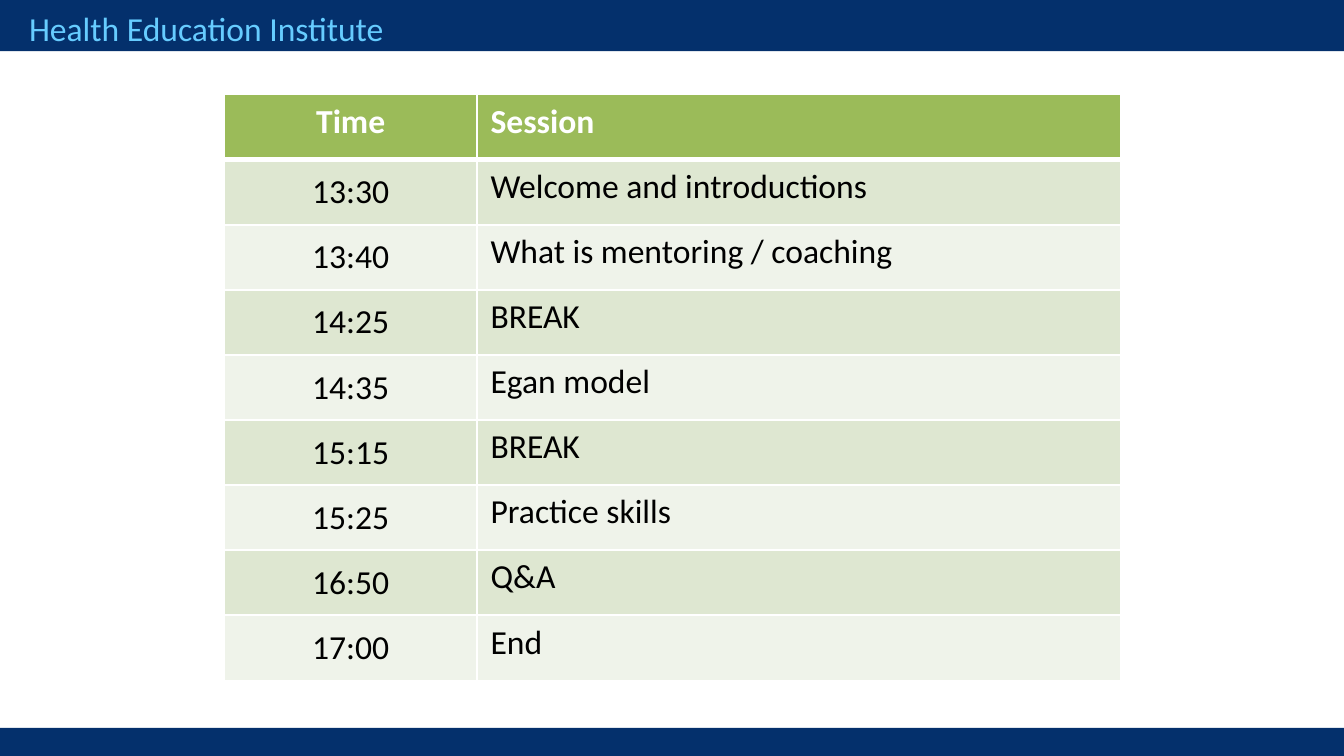
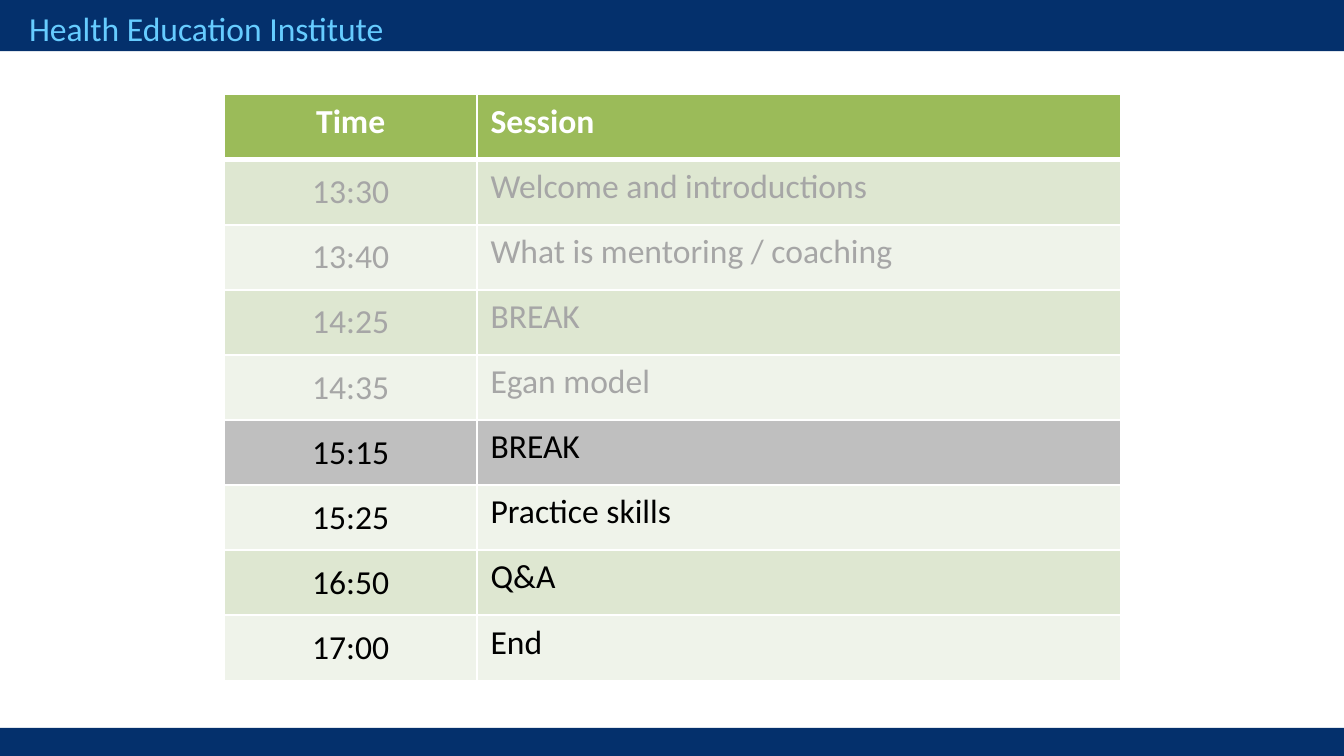
from lxml import etree
from pptx import Presentation
from pptx.dml.color import RGBColor
from pptx.enum import shapes, text
from pptx.oxml import ns
from pptx.util import Cm, Pt

COLORS = {
    "band": "04306C",
    "brand": "66CCFF",
    "header": "9BBB59",
    "odd": "DEE7D1",
    "even": "EFF3EA",
    "current": "BFBFBF",
    "past": "A6A6A6",
    "text": "000000",
    "white": "FFFFFF",
}
FONT = "Calibri"
SIZE = Pt(18)
WIDTH, HEIGHT = Cm(25.4), Cm(14.29)
TOP_BAND = (0, 0, WIDTH, Cm(0.97))
BOTTOM_BAND = (0, Cm(13.76), WIDTH, Cm(0.53))
BRAND_BOX = (Cm(0.3), Cm(0.02), Cm(10.8), Cm(1.02))
AGENDA_BOX = (Cm(4.24), Cm(1.79), Cm(16.94), Cm(11.07))
TIME_SHARE = 0.282

HEADER = ("Time", "Session")
SESSIONS = [
    ("13:30", "Welcome and introductions"),
    ("13:40", "What is mentoring / coaching"),
    ("14:25", "BREAK"),
    ("14:35", "Egan model"),
    ("15:15", "BREAK"),
    ("15:25", "Practice skills"),
    ("16:50", "Q&A"),
    ("17:00", "End"),
]


def rgb(name):
    """Return the palette colour called name."""
    return RGBColor.from_string(COLORS[name])


def style_text(p, color, bold=False):
    """Apply the shared font to a paragraph."""
    p.font.name, p.font.size, p.font.bold = FONT, SIZE, bold
    p.font.color.rgb = rgb(color)


def add_band(slide, box):
    """Draw one plain band across the slide."""
    sp = slide.shapes.add_shape(shapes.MSO_SHAPE.RECTANGLE, *box)
    sp.shadow.inherit = False
    sp.fill.solid()
    sp.fill.fore_color.rgb = rgb("band")
    sp.line.fill.background()


def add_frame(slide):
    """Add the bands and the organisation name that all slides share."""
    add_band(slide, TOP_BAND)
    add_band(slide, BOTTOM_BAND)
    tf = slide.shapes.add_textbox(*BRAND_BOX).text_frame
    tf.word_wrap = True
    tf.auto_size = text.MSO_AUTO_SIZE.SHAPE_TO_FIT_TEXT
    p = tf.paragraphs[0]
    p.text = "Health Education Institute"
    style_text(p, "brand")


def set_borders(cell, top=1, bottom=1):
    """Give a cell white borders, with widths in points."""
    tc_pr = cell._tc.get_or_add_tcPr()
    for side, width in (("L", 1), ("R", 1), ("T", top), ("B", bottom)):
        ln = etree.SubElement(tc_pr, ns.qn(f"a:ln{side}"), w=str(Pt(width)))
        fill = etree.SubElement(ln, ns.qn("a:solidFill"))
        etree.SubElement(fill, ns.qn("a:srgbClr"), val=COLORS["white"])


def row_colors(row, current):
    """Return the fill and text colours of a row."""
    if row == 0:
        return "header", "white"
    fill = "current" if row == current else ("even", "odd")[row % 2]
    return fill, "past" if current and row < current else "text"


def add_agenda(slide, box, current=None):
    """Add the agenda table, highlighting the current row and greying earlier ones."""
    rows = [HEADER, *SESSIONS]
    left, top, width, height = box
    table = slide.shapes.add_table(len(rows), len(HEADER), left, top, width, height).table
    table.horz_banding = False
    table.columns[0].width = round(width * TIME_SHARE)
    table.columns[1].width = width - table.columns[0].width
    for i, values in enumerate(rows):
        table.rows[i].height = height // len(rows)
        fill, color = row_colors(i, current)
        for j, value in enumerate(values):
            cell = table.cell(i, j)
            set_borders(cell, top=3 if i == 1 else 1, bottom=3 if i == 0 else 1)
            cell.fill.solid()
            cell.fill.fore_color.rgb = rgb(fill)
            p = cell.text_frame.paragraphs[0]
            p.text = value
            style_text(p, color, bold=i == 0)
            if j == 0:
                p.alignment = text.PP_ALIGN.CENTER
                if i > 0:
                    cell.vertical_anchor = text.MSO_ANCHOR.MIDDLE


def main():
    """Build the agenda slides and save them."""
    prs = Presentation()
    prs.slide_width, prs.slide_height = WIDTH, HEIGHT
    for current in (None, 5):
        slide = prs.slides.add_slide(prs.slide_layouts.get_by_name("Blank"))
        add_frame(slide)
        add_agenda(slide, AGENDA_BOX, current)
    prs.save("out.pptx")


if __name__ == "__main__":
    main()
